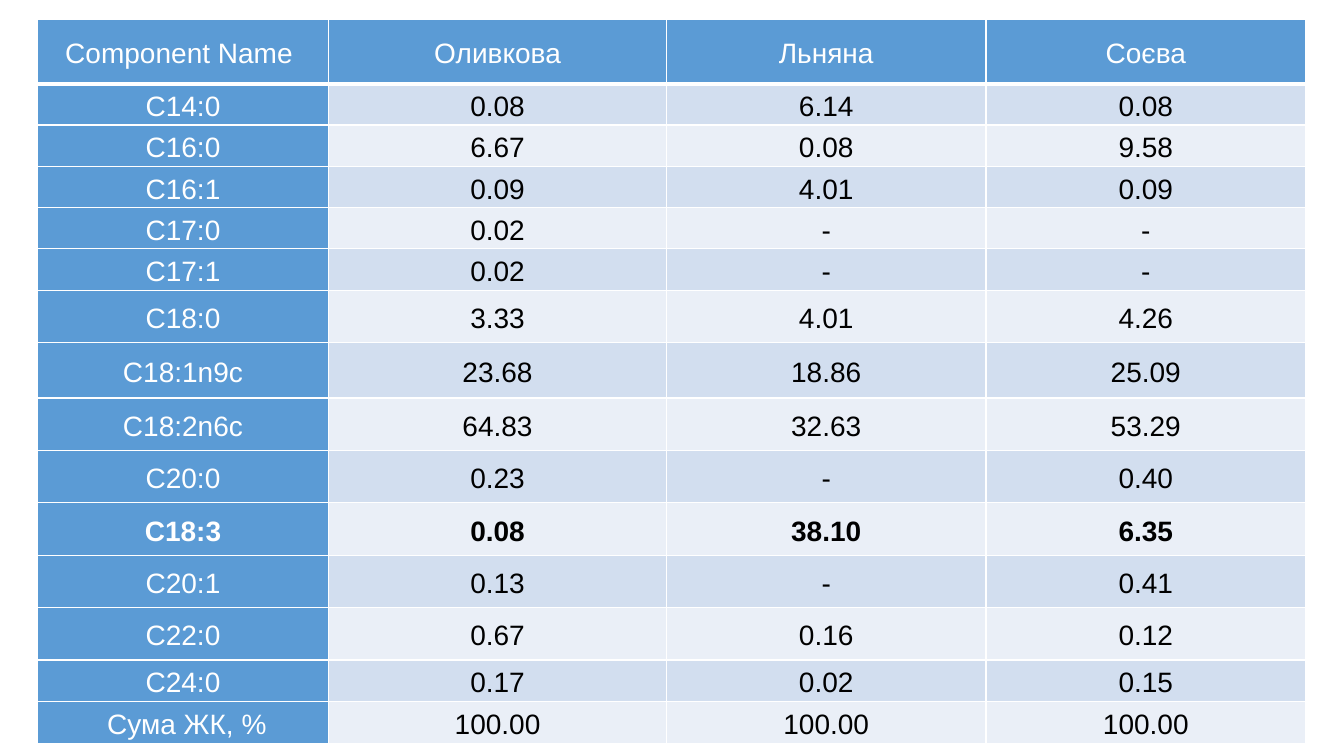
from lxml.etree import SubElement
from pptx import Presentation
from pptx.dml.color import RGBColor
from pptx.enum.text import MSO_ANCHOR, PP_ALIGN
from pptx.oxml.ns import qn
from pptx.util import Inches, Pt

HEADER = ("Component Name ", "Оливкова", "Льняна", "Соєва")
FATTY_ACIDS = [
    ("С14:0", "0.08", "6.14", "0.08"),
    ("С16:0", "6.67", "0.08", "9.58"),
    ("С16:1", "0.09", "4.01", "0.09"),
    ("С17:0", "0.02", "-", "-"),
    ("С17:1", "0.02", "-", "-"),
    ("С18:0", "3.33", "4.01", "4.26"),
    ("C18:1n9c", "23.68", "18.86", "25.09"),
    ("C18:2n6c", "64.83", "32.63", "53.29"),
    ("C20:0", "0.23", "-", "0.40"),
    ("C18:3", "0.08", "38.10", "6.35"),
    ("C20:1", "0.13", "-", "0.41"),
    ("C22:0", "0.67", "0.16", "0.12"),
    ("C24:0", "0.17", "0.02", "0.15"),
    (" Сума ЖК, %", "100.00", "100.00", "100.00"),
]
HIGHLIGHTED = "C18:3"
COLUMN_WIDTHS = (2.89, 3.35, 3.17, 3.17)
ROW_HEIGHTS = [0.64] + [0.41] * 5 + [0.52, 0.55] + [0.52] * 5 + [0.41, 0.42]
HEADING_BLUE = "5B9BD5"
BANDS = ("EAEFF7", "D2DEEF")
WHITE = "FFFFFF"
BLACK = "000000"


def color(hex_value):
    return RGBColor.from_string(hex_value)


def add_borders(cell, bottom_width):
    properties = cell._tc.get_or_add_tcPr()
    widths = {"a:lnL": 1, "a:lnR": 1, "a:lnT": 1, "a:lnB": bottom_width}
    for tag, width in widths.items():
        line = SubElement(properties, qn(tag), w=str(Pt(width)))
        fill = SubElement(line, qn("a:solidFill"))
        SubElement(fill, qn("a:srgbClr"), val=WHITE)


def format_cell(cell, text, fill, text_color, bold, bottom_width):
    add_borders(cell, bottom_width)
    cell.fill.solid()
    cell.fill.fore_color.rgb = color(fill)
    cell.vertical_anchor = MSO_ANCHOR.MIDDLE
    cell.margin_left = cell.margin_right = Inches(0.07)
    cell.margin_top = cell.margin_bottom = 0
    paragraph = cell.text_frame.paragraphs[0]
    paragraph.alignment = PP_ALIGN.CENTER
    paragraph.line_spacing = 1.15
    run = paragraph.add_run()
    run.text = text
    run.font.name = "Arial"
    run.font.size = Pt(20)
    run.font.bold = bold
    run.font.color.rgb = color(text_color)


def main():
    presentation = Presentation()
    presentation.slide_width = Inches(13.33)
    presentation.slide_height = Inches(7.5)
    slide = presentation.slides.add_slide(presentation.slide_layouts[6])

    rows = [HEADER] + FATTY_ACIDS
    table = slide.shapes.add_table(
        len(rows), len(HEADER), Inches(0.37), Inches(0.19),
        Inches(sum(COLUMN_WIDTHS)), Inches(sum(ROW_HEIGHTS)),
    ).table
    table.first_col = True
    for column, width in zip(table.columns, COLUMN_WIDTHS):
        column.width = Inches(width)
    for row, height in zip(table.rows, ROW_HEIGHTS):
        row.height = Inches(height)

    for row_index, values in enumerate(rows):
        for column_index, text in enumerate(values):
            heading = row_index == 0 or column_index == 0
            format_cell(
                table.cell(row_index, column_index), text,
                fill=HEADING_BLUE if heading else BANDS[row_index % 2],
                text_color=WHITE if heading else BLACK,
                bold=values[0] == HIGHLIGHTED,
                bottom_width=3 if row_index == 0 else 1,
            )

    presentation.save("out.pptx")


if __name__ == "__main__":
    main()
